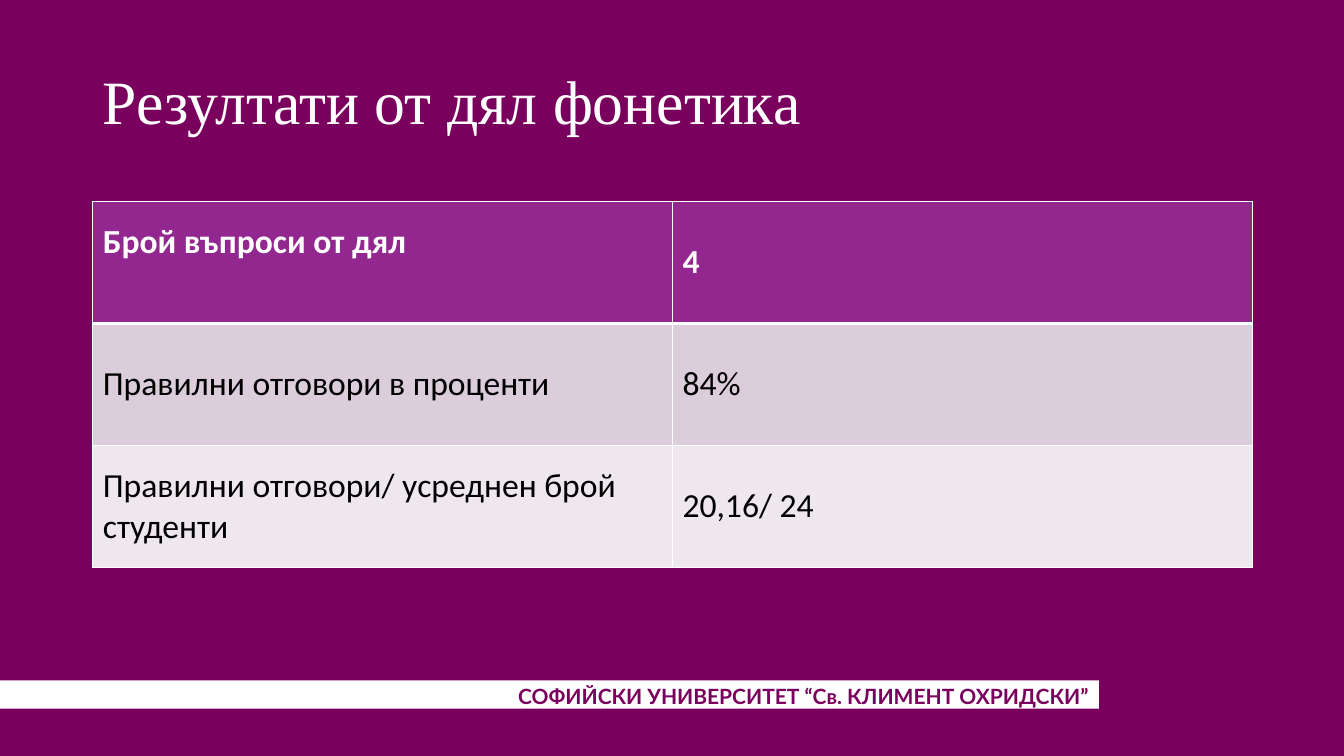
"""Build the slide with the results of the phonetics section."""
import pptx
import pptx.util
import pptx.dml.color
import pptx.enum.shapes
import pptx.enum.text
import pptx.oxml
import pptx.oxml.ns

Inches, Pt = pptx.util.Inches, pptx.util.Pt
ALIGN, ANCHOR = pptx.enum.text.PP_ALIGN, pptx.enum.text.MSO_ANCHOR

TITLE = "Резултати от дял фонетика"
FOOTER = "СОФИЙСКИ УНИВЕРСИТЕТ “Св. КЛИМЕНТ ОХРИДСКИ”"
ROWS = [
    ("Брой въпроси от дял", "4"),
    ("Правилни отговори в проценти", "84%"),
    ("Правилни отговори/ усреднен брой студенти", "20,16/ 24"),
]
COLORS = {"plum": "7A005E", "white": "FFFFFF", "black": "000000",
          "header": "92278F", "band1": "DCCDDB", "band2": "EEE8EE"}
ROW_FILLS = ["header", "band1", "band2"]
FORMATS = {
    "title": {"name": "Times New Roman", "size": Pt(44), "bold": False},
    "footer": {"name": "Lato", "size": Pt(15), "bold": True},
    "header": {"name": "Calibri", "size": Pt(24), "bold": True},
    "body": {"name": "Calibri", "size": Pt(24), "bold": False},
}
LEFT, WIDTH = 0.92, 11.5
TABLE_TOP, ROW_HEIGHT = 2, 1.21


def rgb(name):
    """Return the named colour."""
    return pptx.dml.color.RGBColor.from_string(COLORS[name])


def paint(fill, color):
    """Make a fill solid."""
    fill.solid()
    fill.fore_color.rgb = rgb(color)


def write(tf, text, style, color, anchor=ANCHOR.MIDDLE):
    """Put one formatted run into a text frame and return its paragraph."""
    tf.word_wrap = True
    tf.vertical_anchor = anchor
    p = tf.paragraphs[0]
    r = p.add_run()
    r.text = text
    for key, value in FORMATS[style].items():
        setattr(r.font, key, value)
    r.font.color.rgb = rgb(color)
    return p


def add_borders(cell, widths):
    """Draw white cell borders ahead of the cell fill."""
    tc_pr = cell._tc.get_or_add_tcPr()
    for i, (side, width) in enumerate(widths.items()):
        tc_pr.insert(i, pptx.oxml.parse_xml(
            f'<a:{side} {pptx.oxml.ns.nsdecls("a")} w="{Pt(width)}">'
            f'<a:solidFill><a:srgbClr val="{COLORS["white"]}"/></a:solidFill></a:{side}>'))


def add_results(slide):
    """Add the results table."""
    n_rows, n_cols = len(ROWS), len(ROWS[0])
    table = slide.shapes.add_table(n_rows, n_cols, Inches(LEFT), Inches(TABLE_TOP),
                                   Inches(WIDTH), Inches(ROW_HEIGHT * n_rows)).table
    for i, row in enumerate(ROWS):
        table.rows[i].height = Inches(ROW_HEIGHT)
        style, color = ("header", "white") if i == 0 else ("body", "black")
        for j, text in enumerate(row):
            cell = table.cell(i, j)
            write(cell.text_frame, text, style, color)
            cell.vertical_anchor = ANCHOR.MIDDLE
            paint(cell.fill, ROW_FILLS[i])
            add_borders(cell, {"lnL": 1, "lnR": 1, "lnT": 3 if i == 1 else 1,
                               "lnB": 3 if i == 0 else 1})
    table.cell(0, 0).margin_bottom = Inches(0.45)


def main():
    """Build and save the slide."""
    prs = pptx.Presentation()
    prs.slide_width, prs.slide_height = Inches(13.33), Inches(7.5)
    slide = prs.slides.add_slide(prs.slide_layouts[5])
    paint(slide.background.fill, "plum")

    bar = slide.shapes.add_shape(pptx.enum.shapes.MSO_SHAPE.RECTANGLE, 0,
                                 Inches(6.75), Inches(10.9), Inches(0.28))
    bar.shadow.inherit = False
    paint(bar.fill, "white")
    bar.line.fill.background()

    footer = slide.shapes.add_textbox(Inches(3.54), Inches(6.73), Inches(7.36), Inches(0.35))
    write(footer.text_frame, FOOTER, "footer", "plum", ANCHOR.TOP).alignment = ALIGN.RIGHT

    title = slide.shapes.title
    title.left, title.top = Inches(LEFT), Inches(0.31)
    title.width, title.height = Inches(WIDTH), Inches(1.45)
    p = write(title.text_frame, TITLE, "title", "white")
    p.alignment, p.line_spacing = ALIGN.LEFT, 0.9

    add_results(slide)
    prs.save("out.pptx")


if __name__ == "__main__":
    main()
